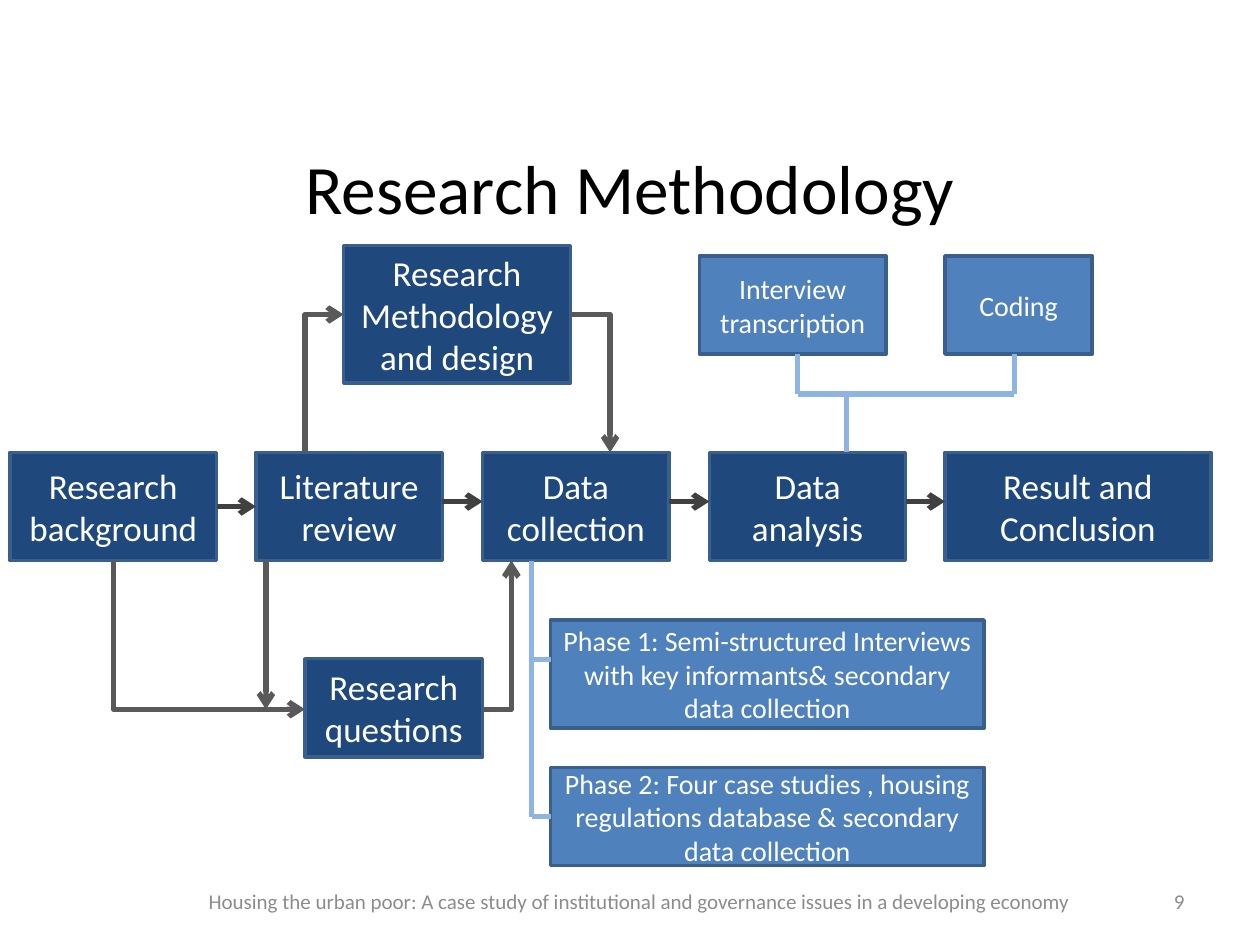
"""Build the research methodology flow chart slide."""
from itertools import pairwise

from lxml import etree
from pptx import Presentation
from pptx import util as u
from pptx.dml.color import RGBColor
from pptx.enum import shapes, text
from pptx.oxml.ns import qn

NAVY, BLUE, EDGE = "1F497D", "4F81BD", "3A5F8C"
PALE, GREY, DARK = "8EB4E3", "595959", "404040"


def colour(value):
    return RGBColor.from_string(value)


def write(box, words, size=20, ink="FFFFFF", align="CENTER", font="Calibri"):
    frame = box.text_frame
    frame.word_wrap = True
    frame.vertical_anchor = text.MSO_ANCHOR.MIDDLE
    para = frame.paragraphs[0]
    para.alignment = getattr(text.PP_ALIGN, align)
    span = para.add_run()
    span.text = words
    span.font.name, span.font.size = font, u.Pt(size)
    span.font.color.rgb = colour(ink)


class Flow:
    def __init__(self, page, edge_width=2, line_width=3):
        self.page = page
        self.edge_width = u.Pt(edge_width)
        self.line_width = u.Pt(line_width)

    def label(self, words, place, **style):
        write(self.page.shapes.add_textbox(*map(u.Cm, place)), words, **style)

    def box(self, words, place, fill=NAVY, size=20):
        box = self.page.shapes.add_shape(shapes.MSO_SHAPE.RECTANGLE, *map(u.Cm, place))
        box.shadow.inherit = False
        box.fill.solid()
        box.fill.fore_color.rgb = colour(fill)
        box.line.color.rgb = colour(EDGE)
        box.line.width = self.edge_width
        write(box, words, size=size)

    def line(self, start, end, ink=PALE, arrow=None, bent=False):
        kind = shapes.MSO_CONNECTOR.ELBOW if bent else shapes.MSO_CONNECTOR.STRAIGHT
        line = self.page.shapes.add_connector(kind, *map(u.Cm, (*start, *end)))
        line.line.color.rgb = colour(ink)
        line.line.width = self.line_width
        properties = line._element.spPr
        if bent:
            properties.find(qn("a:prstGeom")).set("prst", "bentConnector2")
        if arrow:
            etree.SubElement(line.line._get_or_add_ln(), qn(f"a:{arrow}")).set("type", "arrow")
        etree.SubElement(properties, qn("a:effectLst"))


def main():
    deck = Presentation()
    deck.slide_width, deck.slide_height = u.Cm(25.4), u.Cm(19.05)
    flow = Flow(deck.slides.add_slide(deck.slide_layouts[6]))

    flow.label("Research Methodology", (1.27, 2.97, 22.86, 1.6), size=39.6, ink="000000")
    flow.label("Housing the urban poor: A case study of institutional and governance issues "
               "in a developing economy", (3.76, 17.65, 18.26, 1.02), size=12, ink="8C8C8C")
    flow.label("9", (18.21, 17.65, 5.92, 1.02), size=12, ink="8C8C8C", align="RIGHT")

    top, height = 9.12, 2.18
    bottom = top + height
    steps = [("Research background", 0.2, 4.17), ("Literature review", 5.16, 3.76),
             ("Data collection", 9.73, 3.76), ("Data analysis", 14.3, 3.96),
             ("Result and Conclusion", 19.05, 5.36)]
    for words, left, width in steps:
        flow.box(words, (left, top, width, height))
    for (words, left, width), (_, target, _) in pairwise(steps):
        middle = 10.21 if words == "Research background" else 10.11
        flow.line((left + width, middle), (target, middle), ink=DARK, arrow="tailEnd")

    flow.box("Research Methodology and design", (6.93, 4.95, 4.57, 2.77))
    flow.box("Research questions", (6.15, 13.28, 3.58, 1.98))
    details = [
        ("Interview transcription", (14.1, 5.16, 3.76, 1.98)),
        ("Coding", (19.05, 5.16, 2.97, 1.98)),
        ("Phase 1: Semi-structured Interviews with key informants& secondary data collection",
         (11.1, 12.5, 8.74, 2.18)),
        ("Phase 2: Four case studies , housing regulations database & secondary data collection",
         (11.1, 15.47, 8.74, 1.98)),
    ]
    for words, place in details:
        flow.box(words, place, fill=BLUE, size=16)

    elbows = [((6.93, 6.34), (6.15, top), "headEnd"),
              ((11.5, 6.34), (12.3, top), "tailEnd"),
              ((6.15, 14.3), (2.29, bottom), "headEnd"),
              ((9.73, 14.3), (10.31, bottom), "tailEnd")]
    for start, end, arrow in elbows:
        flow.line(start, end, ink=GREY, arrow=arrow, bent=True)
    flow.line((5.36, bottom), (5.36, 14.3), ink=GREY, arrow="tailEnd")

    fork, trunk = 7.94, 10.72
    flow.line((16.08, fork), (20.45, fork))
    for x, start, end in [(16.08, 7.14, fork), (20.45, 7.14, fork),
                          (17.07, fork, top), (trunk, bottom, 16.46)]:
        flow.line((x, start), (x, end))
    for y in (13.3, 16.46):
        flow.line((trunk, y), (11.1, y))

    deck.save("out.pptx")


if __name__ == "__main__":
    main()
